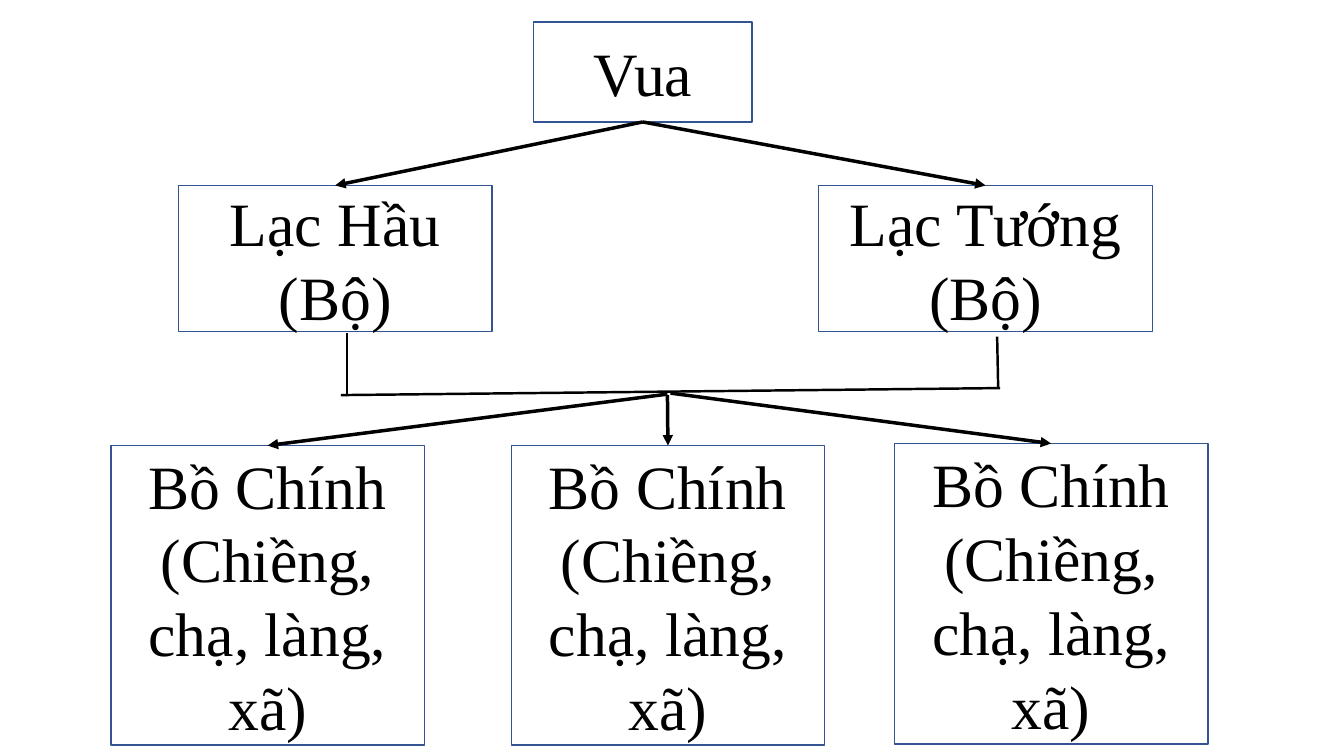
from lxml.etree import SubElement
from pptx import Presentation
from pptx.dml.color import RGBColor
from pptx.enum.shapes import MSO_CONNECTOR, MSO_SHAPE
from pptx.enum.text import MSO_ANCHOR, PP_ALIGN
from pptx.oxml.ns import qn
from pptx.util import Inches, Pt


def color(code):
    return RGBColor.from_string(code)


def draw(start, end, width, arrow=False):
    ends = [Inches(v) for v in (*start, *end)]
    line = slide.shapes.add_connector(MSO_CONNECTOR.STRAIGHT, *ends)
    line.line.color.rgb = color("000000")
    line.line.width = Pt(width)
    if arrow:
        SubElement(line.line._get_or_add_ln(), qn("a:tailEnd"), type="triangle")
    SubElement(line._element.spPr, qn("a:effectLst"))
    return line


prs = Presentation()
prs.slide_width, prs.slide_height = Inches(13.33), Inches(7.5)
slide = prs.slides.add_slide(prs.slide_layouts[6])

# Boxes: king, two lords, three village chiefs
style = {"name": "Times New Roman", "size": Pt(44)}
chief = ["Bồ Chính", "(Chiềng, chạ, làng, xã)"]
nodes = {
    "king": (5.29, 0.22, 2.17, 0.99, ["Vua"]),
    "lord": (1.77, 1.84, 3.11, 1.45, ["Lạc Hầu", "(Bộ)"]),
    "general": (8.12, 1.84, 3.31, 1.45, ["Lạc Tướng (Bộ)"]),
    "left": (1.1, 4.42, 3.11, 2.97, chief),
    "right": (8.87, 4.4, 3.11, 2.98, chief),
    "middle": (5.07, 4.42, 3.11, 2.97, chief),
}
boxes = {}
for key, (*area, lines) in nodes.items():
    box = slide.shapes.add_shape(MSO_SHAPE.RECTANGLE, *map(Inches, area))
    box.shadow.inherit = False
    box.fill.background()
    box.line.color.rgb = color("325491")
    box.line.width = Pt(1)
    frame = box.text_frame
    frame.word_wrap = True
    frame.vertical_anchor = MSO_ANCHOR.MIDDLE
    frame.text = "\n".join(lines)
    for para in frame.paragraphs:
        para.alignment = PP_ALIGN.CENTER
        para.font.color.rgb = color("000000")
        for name, value in style.items():
            setattr(para.font, name, value)
    boxes[key] = box

# Arrows from the king to the lords
for key, tip in (("lord", (3.32, 1.84)), ("general", (9.77, 1.84))):
    arrow = draw((6.38, 1.21), tip, 2.5, True)
    arrow.begin_connect(boxes["king"], 2)
    arrow.end_connect(boxes[key], 0)

# Bracket that gathers the two lords
for start, end in (
    ((3.38, 3.92), (9.92, 3.85)),
    ((3.44, 3.91), (3.44, 3.3)),
    ((9.9, 3.85), (9.89, 3.34)),
):
    draw(start, end, 1.75)

# Arrows from the bracket to the chiefs
for key, start, tip in (
    ("left", (6.62, 3.91), (2.66, 4.42)),
    ("middle", (6.62, 3.92), (6.62, 4.42)),
    ("right", (6.65, 3.9), (10.43, 4.4)),
):
    draw(start, tip, 2.5, True).end_connect(boxes[key], 0)

prs.save("out.pptx")
